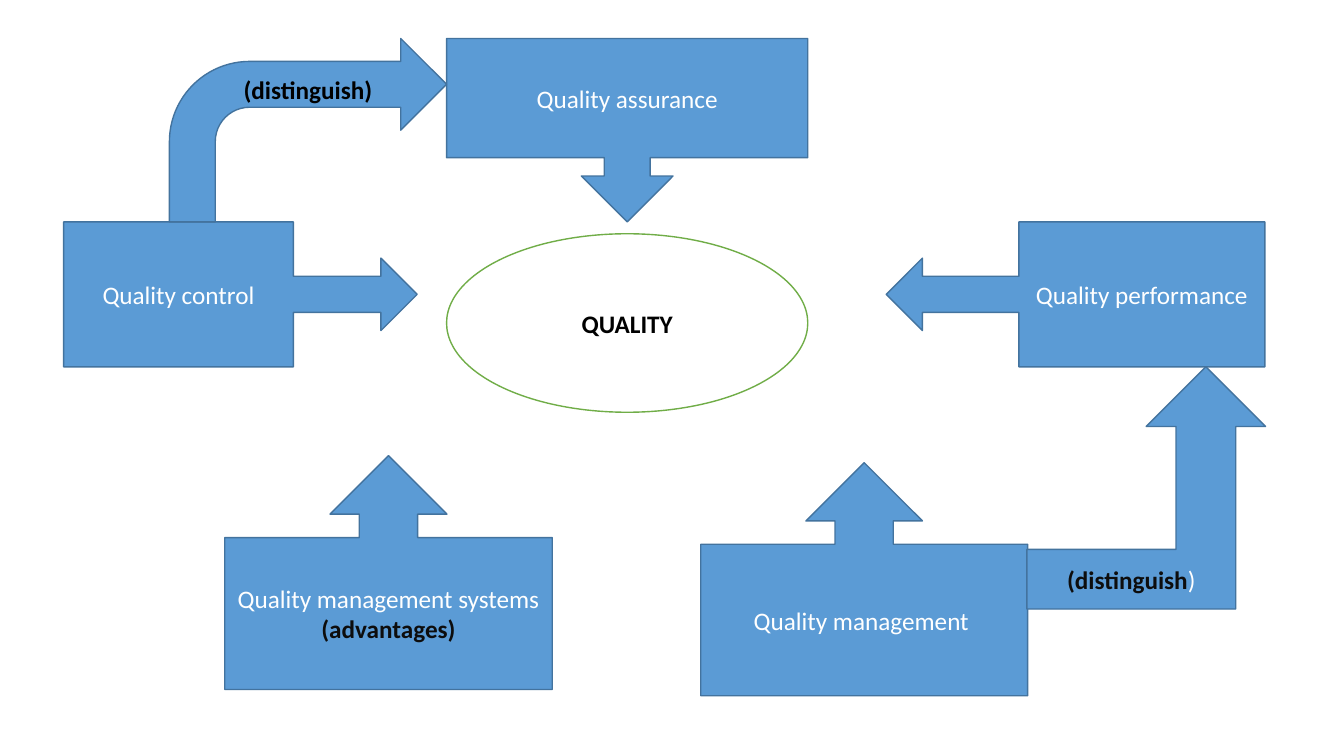
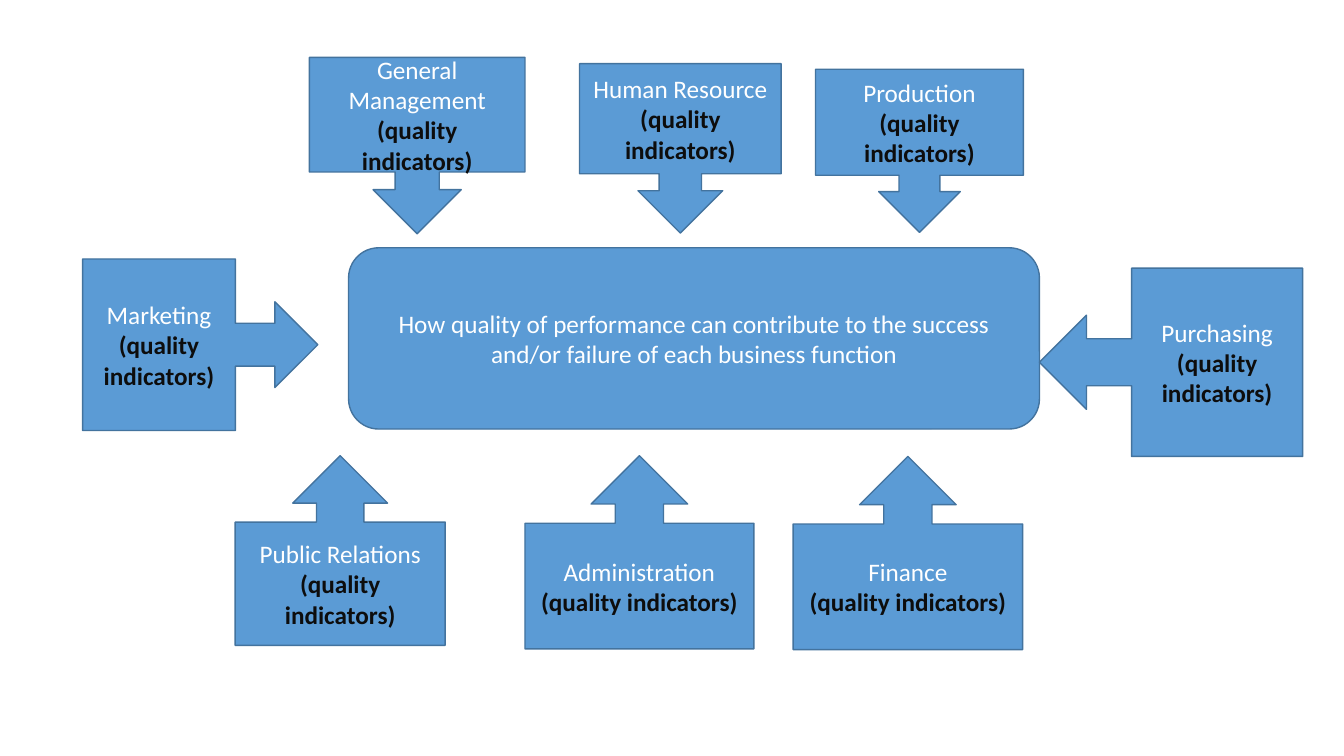
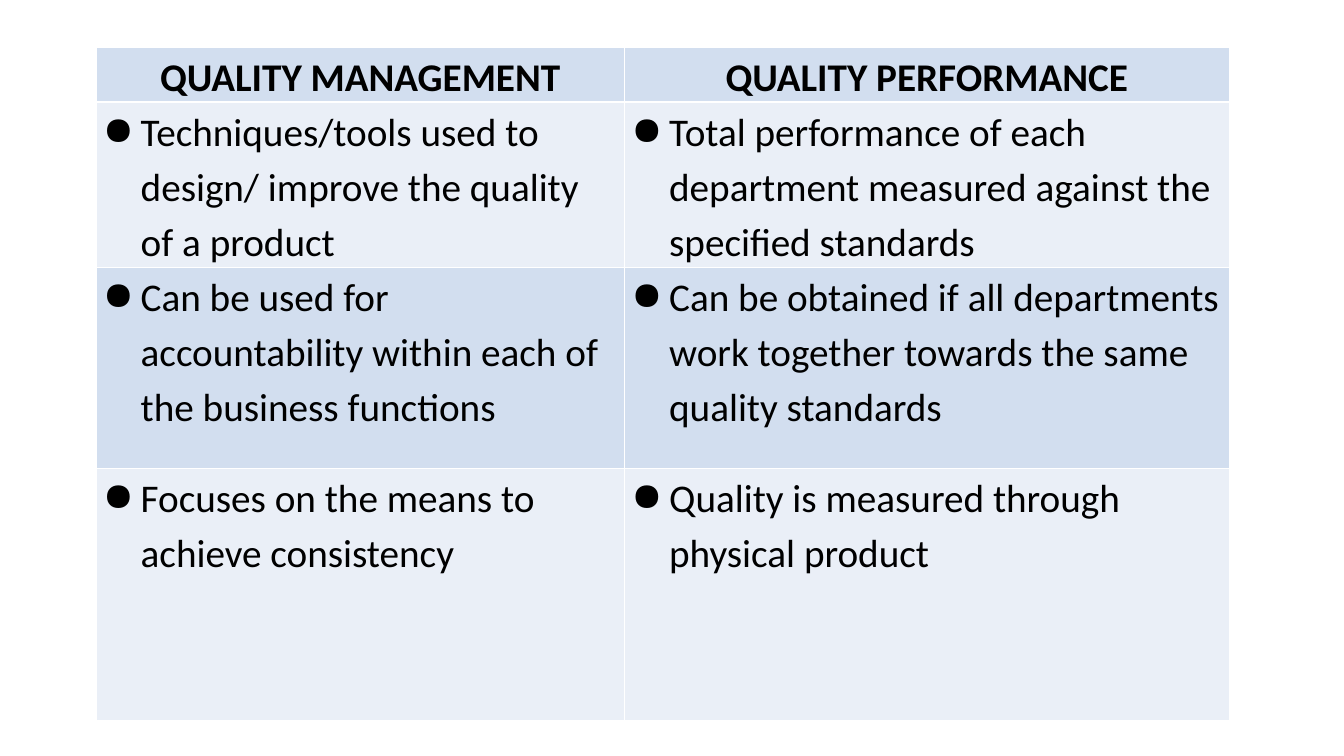
from lxml import etree
from pptx import Presentation
from pptx.dml.color import RGBColor
from pptx.enum import shapes, text
from pptx.oxml import ns
from pptx.util import Pt

KIND = shapes.MSO_SHAPE
DOWN, UP = KIND.DOWN_ARROW_CALLOUT, KIND.UP_ARROW_CALLOUT
LEFT, RIGHT = KIND.LEFT_ARROW_CALLOUT, KIND.RIGHT_ARROW_CALLOUT
MID, TOP = text.MSO_ANCHOR.MIDDLE, text.MSO_ANCHOR.TOP
CENTER = text.PP_ALIGN.CENTER

FONT = "Calibri"
BLUE, EDGE, GREEN = "5B9BD5", "43739E", "70AD47"
WHITE, BLACK, INK = "FFFFFF", "000000", "0D0D0D"
BANDS = "D2DEEF", "EAEFF7"


def plain(words):
    return words, WHITE, False


def bold(words, color=INK):
    return words, color, True


# Each part: kind, (left, top, width, height), paragraphs of runs
QUALITY = [
    (RIGHT, (45.5, 158.5, 252.5, 103.5), [[plain("Quality control")]]),
    (LEFT, (633, 158.5, 270.5, 103.5), [[plain("Quality performance")]]),
    (DOWN, (319, 27.5, 258, 131), [[plain("Quality assurance")]]),
    (UP, (160.5, 325.5, 234, 167),
     [[plain("Quality management systems")], [bold("(advantages)")]]),
    (UP, (500.5, 330.5, 233.5, 166.5), [[plain("Quality management ")]]),
    (KIND.BENT_UP_ARROW, (733.5, 262, 170.5, 173),
     [[bold("(distinguish"), plain(")")]]),
]

GOAL = ("How quality of performance can contribute to the success "
        "and/or failure of each business function")
SIGNS = "(quality indicators)"
UNITS = [
    (DOWN, (221, 41, 154, 126), "General Management"),
    (DOWN, (414, 45.5, 144, 121), "Human Resource"),
    (DOWN, (582.5, 49.5, 148.5, 116.5), "Production"),
    (RIGHT, (59, 185, 168, 122.5), "Marketing"),
    (LEFT, (742.5, 191.5, 188, 134.5), "Purchasing"),
    (UP, (168, 325.5, 150, 135.5), "Public Relations"),
    (UP, (375, 325.5, 163.5, 138), "Administration"),
    (UP, (566.5, 326, 164, 138), "Finance"),
]

ROWS = [
    ("QUALITY MANAGEMENT", "QUALITY PERFORMANCE"),
    ("Techniques/tools used to design/ improve the quality of a product",
     "Total performance of each department measured against the specified standards"),
    ("Can be used for accountability within each of the business functions",
     "Can be obtained if all departments work together towards the same quality standards"),
    ("Focuses on the means to achieve consistency",
     "Quality is measured through physical product"),
]
WIDTHS = 377.5, 432
HEIGHTS = 34.5, 106.5, 143.5, 180


def paint(part, color):
    part.solid()
    part.fore_color.rgb = RGBColor.from_string(color)


def write(para, runs, size):
    for words, color, heavy in runs:
        run = para.add_run()
        run.text = words
        font = run.font
        font.name, font.size, font.bold = FONT, Pt(size), heavy
        paint(font.fill, color)


def draw(slide, kind, box, paras, fill=BLUE, edge=EDGE, anchor=MID, inset=3.6):
    shape = slide.shapes.add_shape(kind, *map(Pt, box))
    shape.shadow.inherit = False
    paint(shape.fill, fill)
    paint(shape.line.fill, edge)
    shape.line.width = Pt(1)
    frame = shape.text_frame
    frame.word_wrap = True
    frame.vertical_anchor = anchor
    frame.margin_top = Pt(inset)
    for i, runs in enumerate(paras):
        para = frame.add_paragraph() if i else frame.paragraphs[0]
        para.alignment = CENTER
        write(para, runs, 18)


def frame_cell(cell):
    """Put a thin white line on all four sides, ahead of the fill."""
    props = cell._tc.get_or_add_tcPr()
    for i, side in enumerate(("lnL", "lnR", "lnT", "lnB")):
        line = etree.Element(ns.qn("a:" + side), w=str(Pt(1)))
        solid = etree.SubElement(line, ns.qn("a:solidFill"))
        etree.SubElement(solid, ns.qn("a:srgbClr"), val=WHITE)
        props.insert(i, line)


def add_bullet(para, indent):
    props = para._p.get_or_add_pPr()
    props.set("marL", str(Pt(indent)))
    props.set("indent", str(-Pt(indent)))
    etree.SubElement(props, ns.qn("a:buChar"), char="●")


def fill_cell(cell, words, row):
    paint(cell.fill, BANDS[row % 2])
    frame_cell(cell)
    cell.margin_left = cell.margin_right = Pt(5)
    cell.margin_top = cell.margin_bottom = 0
    para = cell.text_frame.paragraphs[0]
    para.line_spacing = 1.15
    if row:
        add_bullet(para, 27)
    else:
        para.alignment = CENTER
        para.space_after = Pt(10)
    write(para, [(words, BLACK, row == 0)], 28)


def add_grid(slide):
    table = slide.shapes.add_table(
        len(ROWS), len(WIDTHS), Pt(68.5), Pt(33.5),
        Pt(sum(WIDTHS)), Pt(sum(HEIGHTS))).table
    for col, width in zip(table.columns, WIDTHS):
        col.width = Pt(width)
    for r, (pair, height) in enumerate(zip(ROWS, HEIGHTS)):
        table.rows[r].height = Pt(height)
        for c, words in enumerate(pair):
            fill_cell(table.cell(r, c), words, r)


def main():
    deck = Presentation()
    deck.slide_width, deck.slide_height = Pt(960), Pt(540)
    wheel, units, grid = (
        deck.slides.add_slide(deck.slide_layouts[6]) for _ in range(3))

    draw(wheel, KIND.OVAL, (319, 167, 258, 127.5),
         [[bold("QUALITY", BLACK)]], WHITE, GREEN)
    for part in QUALITY:
        draw(wheel, *part)
    draw(wheel, KIND.BENT_ARROW, (121, 27.5, 198, 131),
         [[bold("(distinguish)", BLACK)]], anchor=TOP, inset=25.5)

    draw(units, KIND.ROUNDED_RECTANGLE, (249, 177, 493.5, 129.5), [[plain(GOAL)]])
    for kind, box, name in UNITS:
        draw(units, kind, box, [[plain(name)], [bold(SIGNS)]])

    add_grid(grid)
    deck.save("out.pptx")


if __name__ == "__main__":
    main()
